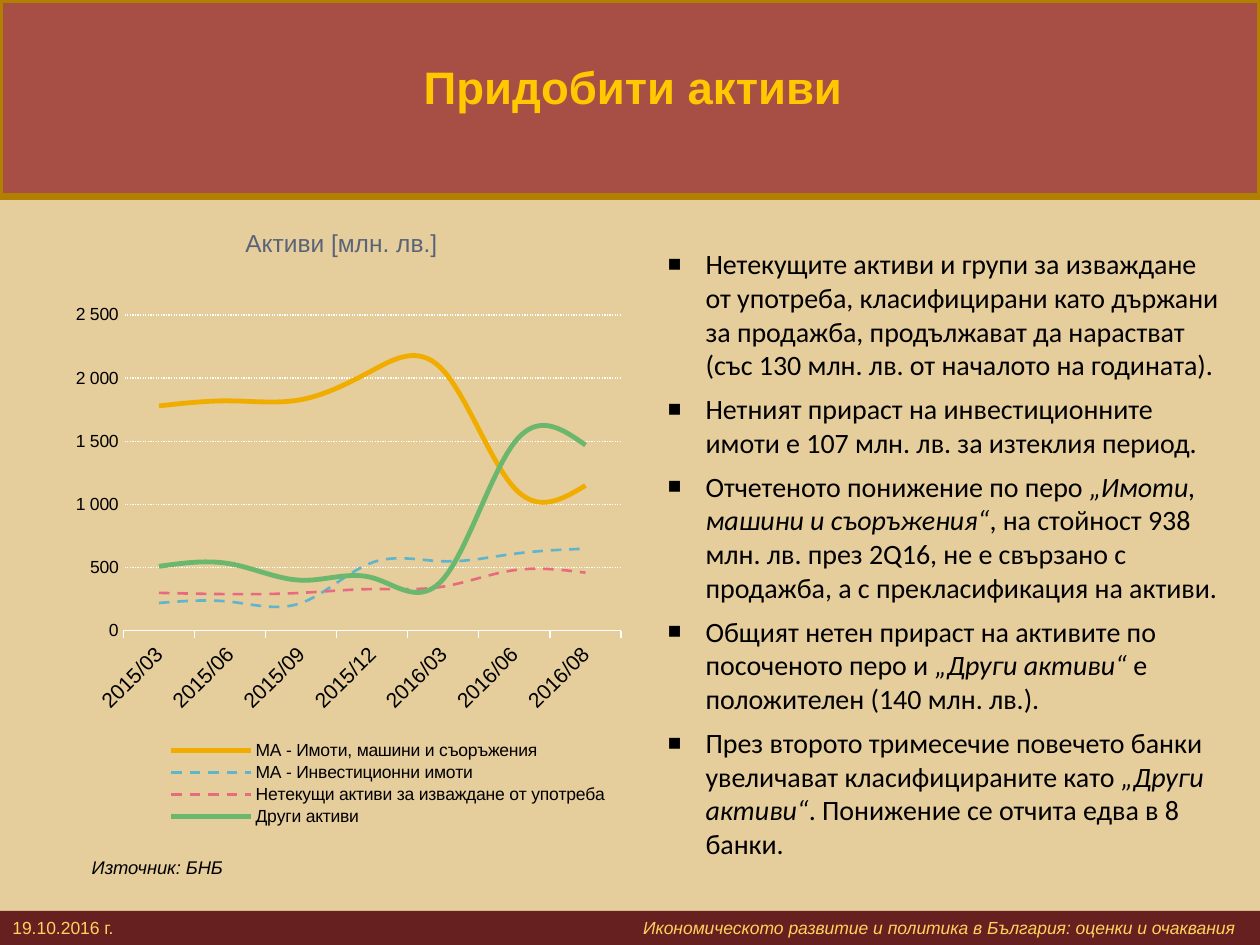
import pptx
import pptx.chart.data
import pptx.dml.color
import pptx.enum.chart
import pptx.enum.dml
import pptx.enum.shapes
import pptx.enum.text
import pptx.oxml
import pptx.oxml.ns
import pptx.util
from lxml import etree

RGB = pptx.dml.color.RGBColor
Pt = pptx.util.Pt
ALIGN = pptx.enum.text.PP_ALIGN
ANCHOR = pptx.enum.text.MSO_ANCHOR
DASH = pptx.enum.dml.MSO_LINE
qn = pptx.oxml.ns.qn

SAND = RGB(0xE5, 0xCD, 0x9C)
BRICK = RGB(0xA8, 0x4F, 0x45)
BRONZE = RGB(0xB2, 0x80, 0x00)
GOLD = RGB(0xFF, 0xC8, 0x00)
WINE = RGB(0x67, 0x20, 0x20)
PALE_GOLD = RGB(0xFF, 0xD2, 0x5D)
SLATE = RGB(0x5A, 0x63, 0x78)
BLACK = RGB(0, 0, 0)
WHITE = RGB(0xFF, 0xFF, 0xFF)
AMBER = RGB(0xF0, 0xAD, 0x00)
BLUE = RGB(0x60, 0xB5, 0xCC)
ROSE = RGB(0xE6, 0x6C, 0x7D)
GREEN = RGB(0x6B, 0xB7, 0x6D)

deck = pptx.Presentation()
deck.slide_width = pptx.util.Inches(10)
deck.slide_height = pptx.util.Inches(7.5)
COLUMNS, ROWS = 100, 75
CELL = deck.slide_width / COLUMNS

slide = deck.slides.add_slide(deck.slide_layouts[6])
slide.background.fill.solid()
slide.background.fill.fore_color.rgb = SAND


def cells(*counts):
    """Turn counts of grid columns or rows into lengths."""
    return [round(count * CELL) for count in counts]


def add_run(paragraph, text, size, color, font="Arial", bold=False, italic=False):
    run = paragraph.add_run()
    run.text = text
    run.font.name = font
    run.font.size = Pt(size)
    run.font.color.rgb = color
    run.font.bold = bold
    run.font.italic = italic


# Header and footer bands
bands = []
for top, height, color in ((0, 15.6, BRICK), (72.3, 2.7, WINE)):
    band = slide.shapes.add_shape(
        pptx.enum.shapes.MSO_SHAPE.RECTANGLE, *cells(0, top, COLUMNS, height))
    band.shadow.inherit = False
    band.fill.solid()
    band.fill.fore_color.rgb = color
    band.line.fill.background()
    bands.append(band)
header, footer = bands
header.line.color.rgb = BRONZE
header.line.width = Pt(3.78)

footer_line = footer.text_frame.paragraphs[0]
footer_line.alignment = ALIGN.LEFT
add_run(footer_line, "19.10.2016 г.\t", 10, PALE_GOLD)
add_run(footer_line, "Икономическото развитие и политика в България: оценки и очаквания",
        10, PALE_GOLD, italic=True)
tabs = etree.SubElement(footer_line._p.get_or_add_pPr(), qn("a:tabLst"))
etree.SubElement(tabs, qn("a:tab"), pos=str(cells(97)[0]), algn="r")

# Title, chart heading and source
for box, text, size, color, align, style in (
    ((4.3, 0, 91.9, 13.7), "Придобити активи", 26, GOLD, ALIGN.CENTER, {"bold": True}),
    ((9.8, 17.6, 34.6, 3.4), "Активи [млн. лв.]", 14, SLATE, ALIGN.CENTER, {}),
    ((6.3, 67.4, 12.7, 2.8), "Източник: БНБ", 10.5, BLACK, ALIGN.LEFT, {"italic": True}),
):
    frame = slide.shapes.add_textbox(*cells(*box)).text_frame
    frame.word_wrap = align == ALIGN.CENTER
    frame.vertical_anchor = ANCHOR.MIDDLE
    frame.paragraphs[0].alignment = align
    add_run(frame.paragraphs[0], text, size, color, **style)

# Findings: every second run is an italic name of a balance sheet item
findings = (
    ("Нетекущите активи и групи за изваждане от употреба, класифицирани като държани "
     "за продажба, продължават да нарастват (със 130 млн. лв. от началото на годината).",),
    ("Нетният прираст на инвестиционните имоти е 107 млн. лв. за изтеклия период.",),
    ("Отчетеното понижение по перо ", "„Имоти, машини и съоръжения“",
     ", на стойност 938 млн. лв. през 2Q16, не е свързано с продажба, "
     "а с прекласификация на активи."),
    ("Общият нетен прираст на активите по посоченото перо и ", "„Други активи“ ",
     "е положителен (140 млн. лв.)."),
    ("През второто тримесечие повечето банки увеличават класифицираните като ",
     "„Други активи“", ". Понижение се отчита едва в 8 банки."),
)
findings_frame = slide.shapes.add_textbox(*cells(52.4, 18.6, 45.8, 48)).text_frame
findings_frame.word_wrap = True
findings_frame.margin_left, findings_frame.margin_top = cells(0.6, 1)
indent = cells(3)[0]
for number, finding in enumerate(findings):
    paragraph = findings_frame.add_paragraph() if number else findings_frame.paragraphs[0]
    paragraph.space_before = Pt(6)
    properties = paragraph._p.get_or_add_pPr()
    properties.set("marL", str(indent))
    properties.set("indent", str(-indent))
    etree.SubElement(properties, qn("a:buSzPct"), val="80000")
    etree.SubElement(properties, qn("a:buFont"), typeface="Arial")
    etree.SubElement(properties, qn("a:buChar"), char="■")
    for part, text in enumerate(finding):
        add_run(paragraph, text, 16, BLACK, "Calibri", italic=part % 2 == 1)

# Chart of assets
assets = (
    ("МА - Имоти, машини и съоръжения", (1780, 1820, 1830, 2060, 2060, 1130, 1150),
     AMBER, 2.75, DASH.SOLID),
    ("МА - Инвестиционни имоти", (220, 230, 220, 540, 550, 610, 650),
     BLUE, 1.5, DASH.DASH),
    ("Нетекущи активи за изваждане от употреба", (300, 290, 300, 330, 350, 480, 460),
     ROSE, 1.5, DASH.DASH),
    ("Други активи", (510, 530, 400, 420, 410, 1490, 1470),
     GREEN, 2.75, DASH.SOLID),
)
chart_data = pptx.chart.data.CategoryChartData(number_format="0")
chart_data.categories = ("2015/03", "2015/06", "2015/09", "2015/12",
                         "2016/03", "2016/06", "2016/08")
for name, values, *_ in assets:
    chart_data.add_series(name, values)
chart = slide.shapes.add_chart(
    pptx.enum.chart.XL_CHART_TYPE.LINE, *cells(4.3, 23.3, 50, 42.5), chart_data).chart
chart.has_title = False
chart.font.name = "Arial"
chart.font.size = Pt(10)
chart.font.color.rgb = BLACK
chart.plots[0].vary_by_categories = False
for series, (_, _, color, width, dash) in zip(chart.plots[0].series, assets):
    series.smooth = True
    series.marker.style = pptx.enum.chart.XL_MARKER_STYLE.NONE
    series.format.line.color.rgb = color
    series.format.line.width = Pt(width)
    series.format.line.dash_style = dash

months, millions = chart.category_axis, chart.value_axis
months.tick_labels.font.size = Pt(12)
months.format.line.color.rgb = WHITE
months.major_tick_mark = pptx.enum.chart.XL_TICK_MARK.OUTSIDE
months._element.find(qn("c:txPr")).find(qn("a:bodyPr")).set("rot", "-2700000")
millions.minimum_scale, millions.maximum_scale, millions.major_unit = 0, 2500, 500
millions.tick_labels.number_format = "#\\ ##0"
millions.tick_labels.number_format_is_linked = False
millions.major_tick_mark = pptx.enum.chart.XL_TICK_MARK.NONE
millions.format.line.fill.background()
gridline = millions.major_gridlines.format.line
gridline.color.rgb = WHITE
gridline.width = Pt(0.75)
gridline.dash_style = DASH.ROUND_DOT

chart.has_legend = True
chart.legend.position = pptx.enum.chart.XL_LEGEND_POSITION.RIGHT
chart.legend.include_in_layout = False
chart.legend.font.size = Pt(10)

# Places of plot and legend, as shares of the chart
plot_area = chart._chartSpace.chart.plotArea
legend = chart.legend._element
for part, target, shares in ((plot_area, "inner", (0.11, 0.04, 0.79, 0.59)),
                             (legend, None, (0.17, 0.83, 0.72, 0.17))):
    for old in part.findall(qn("c:layout")):
        part.remove(old)
    layout = etree.Element(qn("c:layout"))
    manual = etree.SubElement(layout, qn("c:manualLayout"))
    if target:
        etree.SubElement(manual, qn("c:layoutTarget"), val=target)
    for mode in ("xMode", "yMode"):
        etree.SubElement(manual, qn("c:" + mode), val="edge")
    for side, share in zip("xywh", shares):
        etree.SubElement(manual, qn("c:" + side), val=str(share))
    part.insert(0 if target else 1, layout)

deck.save("out.pptx")
